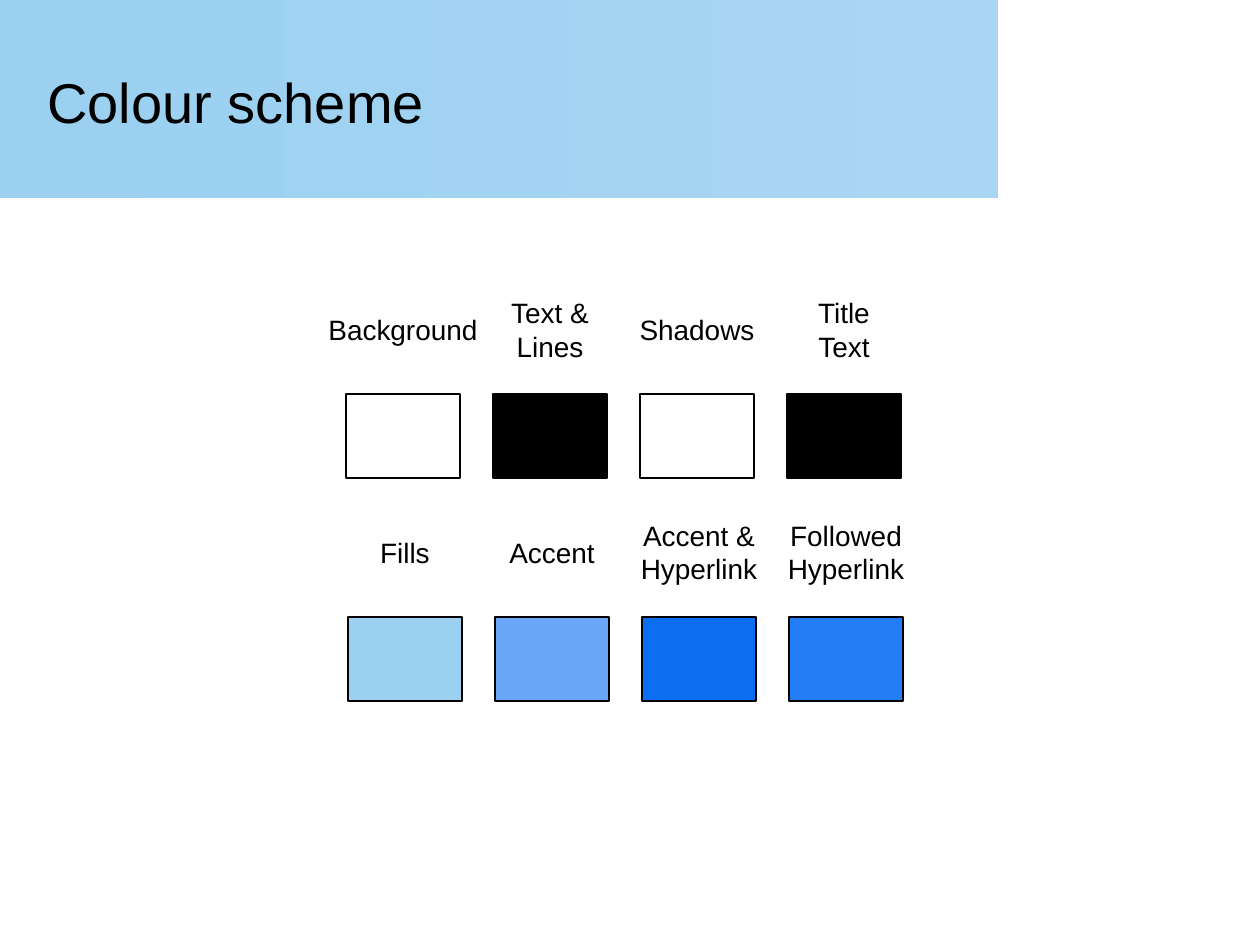
from pptx import Presentation
from pptx.dml.color import RGBColor
from pptx.enum.shapes import MSO_SHAPE
from pptx.enum.text import MSO_ANCHOR, MSO_AUTO_SIZE, PP_ALIGN
from pptx.util import Emu, Pt

BLACK = RGBColor(0x00, 0x00, 0x00)
WHITE = RGBColor(0xFF, 0xFF, 0xFF)
SKY = RGBColor(0x9B, 0xD0, 0xF0)
PALE_SKY = RGBColor(0xA9, 0xD6, 0xF3)
CORNFLOWER = RGBColor(0x6B, 0xA7, 0xF8)
BLUE = RGBColor(0x0B, 0x6D, 0xEF)
BRIGHT_BLUE = RGBColor(0x23, 0x7D, 0xF5)
FONT = "Arial"

SWATCH_W, SWATCH_H, PITCH = 114, 84, 147
LABEL_MID = 35
SWATCH_TOP = 100
LABEL_HEIGHTS = {1: 47, 2: 80}

TOP_ROW = [
    (["Background"], 176, WHITE),
    (["Text &", "Lines"], 106, BLACK),
    (["Shadows"], 142, WHITE),
    (["Title", "Text"], 80, BLACK),
]
BOTTOM_ROW = [
    (["Fills"], 78, SKY),
    (["Accent"], 114, CORNFLOWER),
    (["Accent &", "Hyperlink"], 146, BLUE),
    (["Followed", "Hyperlink"], 146, BRIGHT_BLUE),
]


def px(n):
    return Emu(round(n * 914400 / 126))


def add_rect(s, x, y, w, h):
    sp = s.shapes.add_shape(MSO_SHAPE.RECTANGLE, px(x), px(y), px(w), px(h))
    sp.shadow.inherit = False
    return sp


def add_text(s, x, y, w, h, lines, size, align, wrap):
    tf = s.shapes.add_textbox(px(x), px(y), px(w), px(h)).text_frame
    tf.word_wrap = wrap
    tf.auto_size = MSO_AUTO_SIZE.NONE if wrap else MSO_AUTO_SIZE.SHAPE_TO_FIT_TEXT
    tf.vertical_anchor = MSO_ANCHOR.MIDDLE
    for i, line in enumerate(lines):
        p = tf.paragraphs[0] if i == 0 else tf.add_paragraph()
        p.alignment = align
        r = p.add_run()
        r.text = line
        r.font.name = FONT
        r.font.size = Pt(size)
        r.font.color.rgb = BLACK


def add_header(s, x, y, w, h, title):
    sp = add_rect(s, x, y, w, h)
    sp.line.fill.background()
    sp.fill.gradient()
    sp.fill.gradient_angle = 0
    for stop, color in zip(sp.fill.gradient_stops, (SKY, PALE_SKY)):
        stop.color.rgb = color
    add_text(s, x + 35, y + 38, w - 55, 127, [title], 32, PP_ALIGN.LEFT, True)


def add_swatch_row(s, x, y, swatches):
    for i, (lines, label_w, color) in enumerate(swatches):
        left = x + i * PITCH
        sp = add_rect(s, left, y + SWATCH_TOP, SWATCH_W, SWATCH_H)
        sp.fill.solid()
        sp.fill.fore_color.rgb = color
        sp.line.color.rgb = BLACK
        sp.line.width = Pt(0.75)
        label_h = LABEL_HEIGHTS[len(lines)]
        add_text(s, left + (SWATCH_W - label_w) / 2, y + LABEL_MID - label_h / 2,
                 label_w, label_h, lines, 16, PP_ALIGN.CENTER, False)


def main():
    prs = Presentation()
    prs.slide_width, prs.slide_height = px(1260), px(945)
    s = prs.slides.add_slide(prs.slide_layouts[6])
    add_header(s, 0, 0, 998, 198, "Colour scheme")
    add_swatch_row(s, 346, 294, TOP_ROW)
    add_swatch_row(s, 348, 517, BOTTOM_ROW)
    prs.save("out.pptx")


if __name__ == "__main__":
    main()
